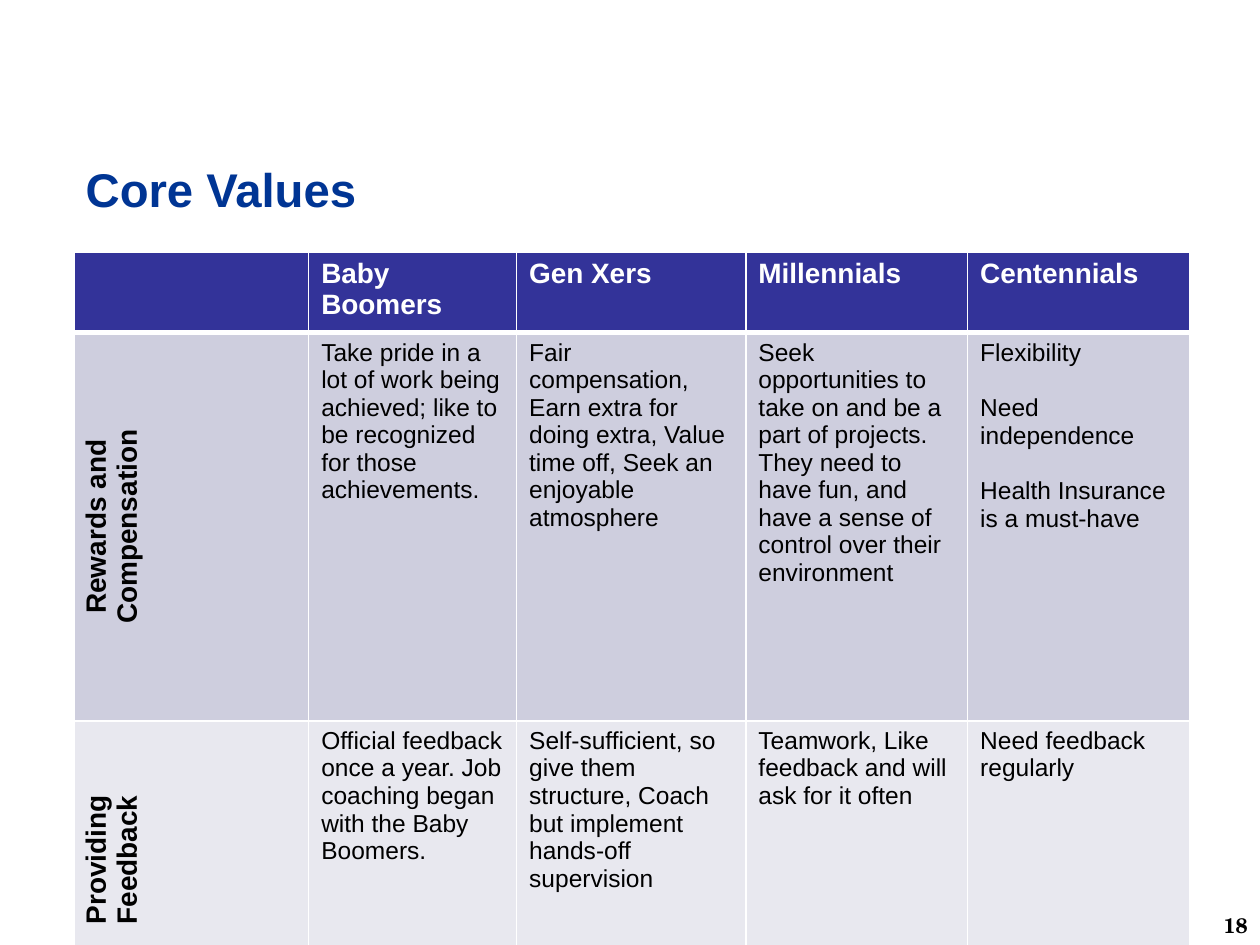
from lxml import etree
from pptx import Presentation, util as u
from pptx.dml.color import RGBColor
from pptx.enum import text
from pptx.oxml.ns import qn

COLORS = {"title": "003594", "header": "333399", "odd": "CECEDE", "even": "E8E8EF",
          "white": "FFFFFF", "black": "000000"}
FONT = "Arial"
HEADERS = ["Baby Boomers", "Gen Xers", "Millennials", "Centennials"]
ROWS = {
    "Rewards and Compensation": [
        "Take pride in a lot of work being achieved; like to be recognized for those achievements.",
        "Fair compensation, Earn extra for doing extra, Value time off, Seek an enjoyable atmosphere",
        "Seek opportunities to take on and be a part of projects. They need to have fun, "
        "and have a sense of control over their environment",
        "Flexibility\nNeed independence\nHealth Insurance is a must-have",
    ],
    "Providing Feedback": [
        "Official feedback once a year. Job coaching began with the Baby Boomers.",
        "Self-sufficient, so give them structure, Coach but implement hands-off supervision",
        "Teamwork, Like feedback and will ask for it often",
        "Need feedback regularly",
    ],
}


class Deck:
    def __init__(self, prs):
        self.prs = prs
        self.s = prs.slides.add_slide(prs.slide_layouts[5])

    def x(self, share):
        return round(self.prs.slide_width * share / 100)

    def y(self, share):
        return round(self.prs.slide_height * share / 100)

    def box(self, left, top, width, height):
        return self.x(left), self.y(top), self.x(width), self.y(height)

    def set_text(self, tf, content, size, color, bold=False, font=FONT,
                 align=text.PP_ALIGN.LEFT, gap=0):
        tf.text = content
        for i, p in enumerate(tf.paragraphs):
            p.alignment = align
            p.space_before = u.Pt(gap if i else 0)
            p.font.size = u.Pt(size)
            for r in p.runs:
                r.font.name = font
                r.font.size = u.Pt(size)
                r.font.bold = bold
                r.font.color.rgb = RGBColor.from_string(COLORS[color])

    def title(self, content, *place):
        sp = self.s.shapes.title
        sp.left, sp.top, sp.width, sp.height = self.box(*place)
        sp.text_frame.vertical_anchor = text.MSO_ANCHOR.MIDDLE
        self.set_text(sp.text_frame, content, 27, "title", bold=True)

    def number(self, content, *place):
        tf = self.s.shapes.add_textbox(*self.box(*place)).text_frame
        tf.word_wrap = True
        tf.vertical_anchor = text.MSO_ANCHOR.MIDDLE
        self.set_text(tf, content, 12, "black", bold=True, font="TeX Gyre Schola",
                      align=text.PP_ALIGN.RIGHT)

    def borders(self, cell, top=1, bottom=1):
        tcPr = cell._tc.get_or_add_tcPr()
        widths = {"lnL": 1, "lnR": 1, "lnT": top, "lnB": bottom}
        for i, (tag, width) in enumerate(widths.items()):
            ln = etree.Element(qn("a:" + tag), w=str(u.Pt(width)))
            fill = etree.SubElement(ln, qn("a:solidFill"))
            etree.SubElement(fill, qn("a:srgbClr"), val=COLORS["white"])
            tcPr.insert(i, ln)

    def cell(self, cell, content, fill, size, color, top=1, bottom=1, vertical=False, **style):
        cell.fill.solid()
        cell.fill.fore_color.rgb = RGBColor.from_string(COLORS[fill])
        self.borders(cell, top, bottom)
        if vertical:
            cell._tc.get_or_add_tcPr().set("vert", "vert270")
        self.set_text(cell.text_frame, content, size, color, **style)

    def table(self, headers, rows, left, top, widths, heights):
        place = self.box(left, top, sum(widths), sum(heights))
        tbl = self.s.shapes.add_table(len(heights), len(widths), *place).table
        for col, width in zip(tbl.columns, widths):
            col.width = self.x(width)
        for row, height in zip(tbl.rows, heights):
            row.height = self.y(height)
        for c, header in enumerate([""] + headers):
            self.cell(tbl.cell(0, c), header, "header", 16, "white", bottom=3, bold=True)
        for i, (label, values) in enumerate(rows.items(), 1):
            fill = "odd" if i % 2 else "even"
            edge = 3 if i == 1 else 1
            self.cell(tbl.cell(i, 0), label, fill, 16, "black", top=edge, vertical=True,
                      bold=True, align=text.PP_ALIGN.CENTER)
            for c, value in enumerate(values, 1):
                self.cell(tbl.cell(i, c), value, fill, 14, "black", top=edge, gap=16)


def main():
    prs = Presentation()
    prs.slide_width, prs.slide_height = u.Inches(10), u.Inches(7.5)
    deck = Deck(prs)
    deck.title("Core Values", 5.8, 15.6, 90, 8.8)
    deck.table(HEADERS, ROWS, 5.9, 26.7, [18.6, 16.5, 18.2, 17.6, 17.6], [8.5, 35, 26])
    deck.number("18", 88.9, 96.5, 11.1, 2.8)
    prs.save("out.pptx")


if __name__ == "__main__":
    main()
